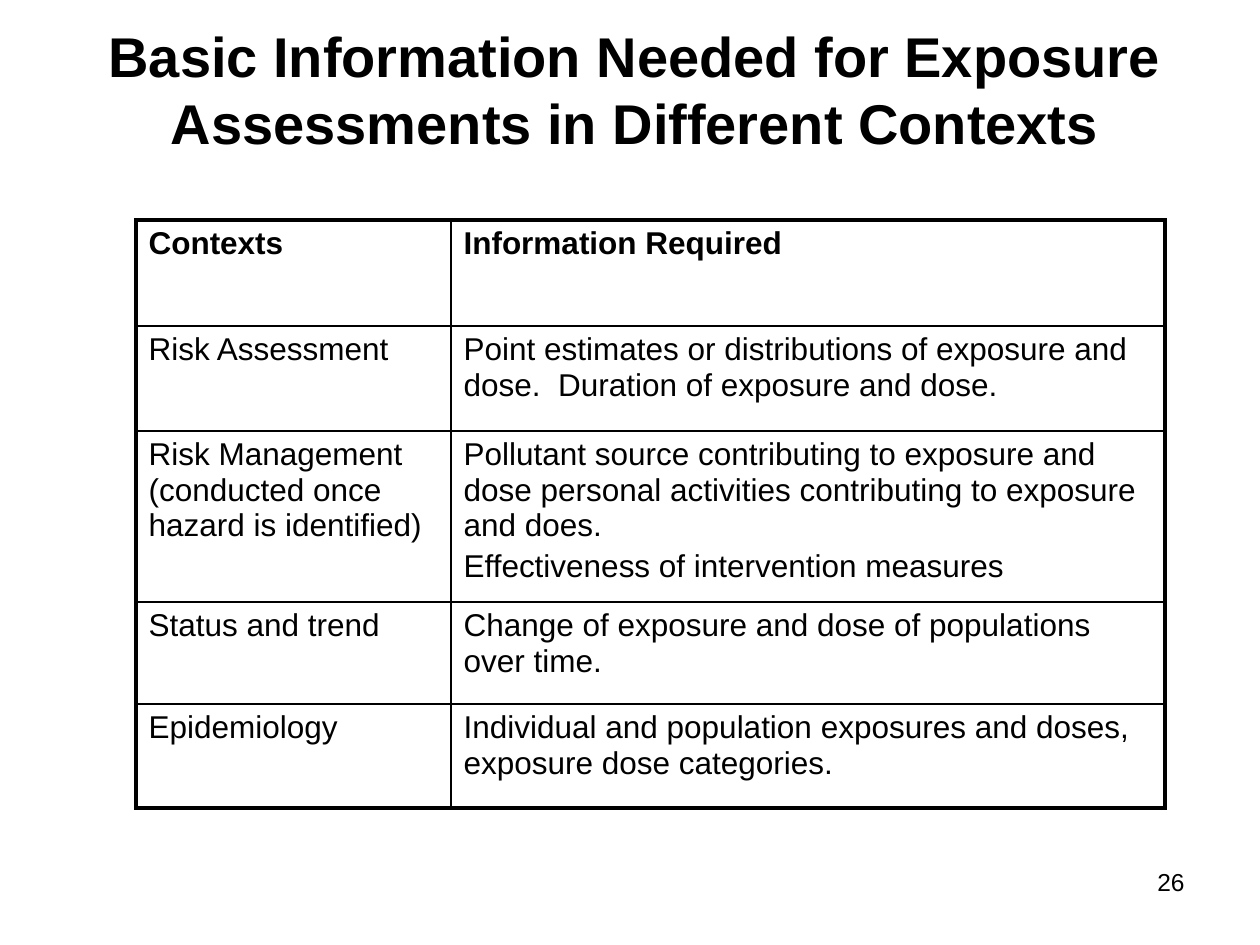
from dataclasses import dataclass

from lxml import etree
from pptx import Presentation
from pptx.dml.color import RGBColor
from pptx.enum.text import MSO_ANCHOR, MSO_AUTO_SIZE, PP_ALIGN
from pptx.oxml.ns import qn
from pptx.util import Pt

LEFT, RIGHT, CENTER = PP_ALIGN.LEFT, PP_ALIGN.RIGHT, PP_ALIGN.CENTER
TOP, MIDDLE = MSO_ANCHOR.TOP, MSO_ANCHOR.MIDDLE
NO_FIT = MSO_AUTO_SIZE.NONE
TITLE_ONLY = 5
SCALE = 914400 / 126


@dataclass
class Theme:
    font: str = "Arial"
    ink: str = "000000"
    title: int = 32
    body: int = 18
    page: int = 14
    thin: float = 1
    thick: float = 2.25
    gap: float = 3.6


def px(n):
    return round(n * SCALE)


def write(frame, text, theme, size, bold=False, align=LEFT):
    frame.word_wrap = True
    for i, line in enumerate(text.split("\n")):
        para = frame.add_paragraph() if i else frame.paragraphs[0]
        para.alignment = align
        para.space_before = Pt(theme.gap if i else 0)
        run = para.add_run()
        run.text = line
        font = run.font
        font.name, font.size, font.bold = theme.font, Pt(size), bold
        font.color.rgb = RGBColor.from_string(theme.ink)


class Deck:
    def __init__(self, theme):
        self.theme = theme
        self.file = Presentation()
        self.file.slide_width, self.file.slide_height = px(1260), px(945)
        self.slide = self.file.slides.add_slide(self.file.slide_layouts[TITLE_ONLY])

    def title(self, text, x, y, w, h):
        shape = self.slide.shapes.title
        shape.left, shape.top, shape.width, shape.height = map(px, (x, y, w, h))
        frame = shape.text_frame
        frame.auto_size, frame.vertical_anchor = NO_FIT, MIDDLE
        write(frame, text, self.theme, self.theme.title, bold=True, align=CENTER)

    def label(self, text, x, y, w, h, size, align):
        box = self.slide.shapes.add_textbox(*map(px, (x, y, w, h)))
        write(box.text_frame, text, self.theme, size, align=align)

    def edge(self, cell, side, width):
        line = etree.SubElement(cell._tc.get_or_add_tcPr(), qn("a:ln" + side), w=str(Pt(width)))
        fill = etree.SubElement(line, qn("a:solidFill"))
        etree.SubElement(fill, qn("a:srgbClr"), val=self.theme.ink)

    def table(self, rows, x, y, wide, high):
        size = map(px, (x, y, sum(wide), sum(high)))
        grid = self.slide.shapes.add_table(len(high), len(wide), *size).table
        grid.horz_banding = grid.first_row = False
        for col, w in zip(grid.columns, wide):
            col.width = px(w)
        for row, h in zip(grid.rows, high):
            row.height = px(h)
        for r, texts in enumerate(rows):
            for c, text in enumerate(texts):
                cell = grid.cell(r, c)
                outer = {"L": c == 0, "R": c == len(wide) - 1,
                         "T": r == 0, "B": r == len(high) - 1}
                for side, rim in outer.items():
                    self.edge(cell, side, self.theme.thick if rim else self.theme.thin)
                cell.fill.background()
                cell.vertical_anchor = TOP
                write(cell.text_frame, text, self.theme, self.theme.body, bold=r == 0)


ROWS = [
    ("Contexts", "Information Required"),
    ("Risk Assessment",
     "Point estimates or distributions of exposure and dose.  Duration of exposure and dose."),
    ("Risk Management (conducted once hazard is identified)",
     "Pollutant source contributing to exposure and dose personal activities "
     "contributing to exposure and does.\nEffectiveness of intervention measures"),
    ("Status and trend", "Change of exposure and dose of populations over time."),
    ("Epidemiology",
     "Individual and population exposures and doses, exposure dose categories."),
]


def main():
    theme = Theme()
    deck = Deck(theme)
    deck.title("Basic Information Needed for Exposure Assessments in Different Contexts",
               63, 21, 1144, 136)
    deck.table(ROWS, 136, 220, (315, 714), (106, 105, 171, 102, 104))
    deck.label("26", 903, 861, 294, 65, theme.page, RIGHT)
    deck.file.save("out.pptx")


if __name__ == "__main__":
    main()
